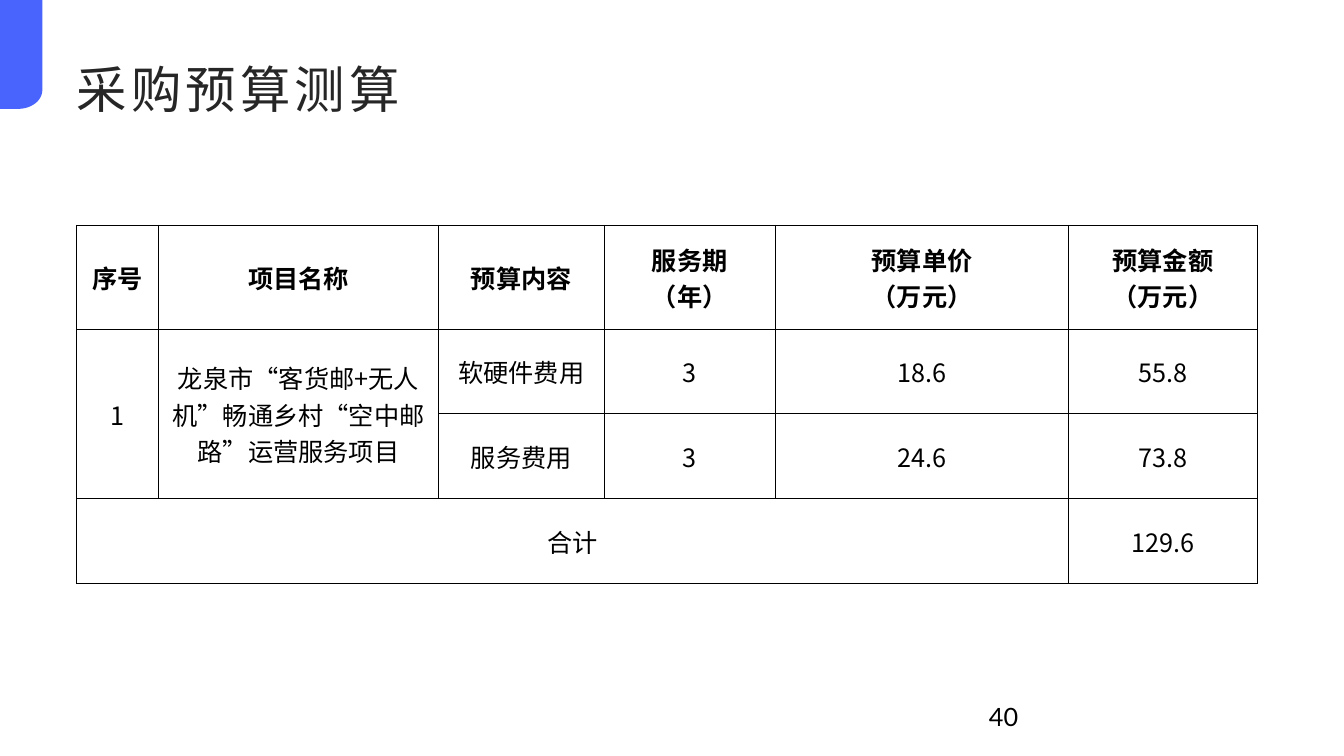
from lxml import etree
from pptx import Presentation
from pptx.dml.color import RGBColor
from pptx.enum.text import MSO_ANCHOR as Anchor, PP_ALIGN as Align
from pptx.oxml import parse_xml
from pptx.oxml.ns import nsdecls, qn
from pptx.util import Inches, Pt


def rgb(value):
    return RGBColor.from_string(value)


def style_run(run, size, font, color, bold=False):
    run.font.size = Pt(size)
    run.font.name = font
    run.font.bold = bold
    run.font.color.rgb = rgb(color)
    east_asian = etree.SubElement(run.font._element, qn("a:ea"))
    east_asian.set("typeface", "Noto Sans CJK SC")


presentation = Presentation()
presentation.slide_width = Inches(13.33)
presentation.slide_height = Inches(7.5)
slide = presentation.slides.add_slide(presentation.slide_layouts[6])

corner = [(0.18, 1.08), (0.31, 1.08), (0.42, 1), (0.42, 0.89)]
curve = []
for step in range(17):
    t = step / 16
    weights = [(1 - t) ** 3, 3 * t * (1 - t) ** 2, 3 * t * t * (1 - t), t ** 3]
    curve.append(tuple(
        sum(weight * point[axis] for weight, point in zip(weights, corner))
        for axis in (0, 1)
    ))
outline = [(0, 1.08)] + curve + [(0.42, 0)]
builder = slide.shapes.build_freeform(0, 0)
builder.add_line_segments([(Inches(x), Inches(y)) for x, y in outline], close=True)
tab = builder.convert_to_shape()
tab.shadow.inherit = False
tab.fill.solid()
tab.fill.fore_color.rgb = rgb("4864FC")
tab.line.fill.background()

title = slide.shapes.add_textbox(Inches(0.76), Inches(0.39), Inches(11.81), Inches(0.79))
frame = title.text_frame
frame.word_wrap = True
frame.vertical_anchor = Anchor.BOTTOM
frame.margin_left = frame.margin_right = frame.margin_top = frame.margin_bottom = 0
frame.text = "采购预算测算"
title_run = frame.paragraphs[0].runs[0]
style_run(title_run, 36, "Cabin", "262626")
title_run.font._element.set("spc", "300")

page_number = slide.shapes.add_textbox(Inches(9.71), Inches(6.91), Inches(2.86), Inches(0.35))
page_number.text_frame.word_wrap = True
page_number.text_frame.text = "40"
style_run(page_number.text_frame.paragraphs[0].runs[0], 18, "Lato", "000000")

column_widths = [0.81, 2.78, 1.64, 1.7, 2.91, 1.87]
row_heights = [1.03, 0.84, 0.84, 0.84]
rows = [
    ["序号", "项目名称", "预算内容", "服务期\n（年）", "预算单价\n（万元）", "预算金额\n（万元）"],
    ["1", "龙泉市“客货邮+无人机”畅通乡村“空中邮路”运营服务项目", "软硬件费用", "3", "18.6", "55.8"],
    ["", "", "服务费用", "3", "24.6", "73.8"],
    ["合计", "", "", "", "", "129.6"],
]
table_frame = slide.shapes.add_table(
    len(rows), len(column_widths), Inches(0.76), Inches(2.235), Inches(11.71), Inches(3.55)
)
table = table_frame.table
table.first_row = False
table.horz_banding = False
for column, width in zip(table.columns, column_widths):
    column.width = Inches(width)
for row, height in zip(table.rows, row_heights):
    row.height = Inches(height)

for row_index, texts in enumerate(rows):
    for column_index, text in enumerate(texts):
        cell = table.cell(row_index, column_index)
        cell.fill.background()
        cell.vertical_anchor = Anchor.MIDDLE
        cell.margin_left = cell.margin_right = cell.margin_top = Inches(0.01)
        cell.margin_bottom = 0
        properties = cell._tc.get_or_add_tcPr()
        for position, side in enumerate(("lnL", "lnR", "lnT", "lnB")):
            properties.insert(position, parse_xml(
                f'<a:{side} {nsdecls("a")} w="{Pt(0.5)}"><a:solidFill>'
                f'<a:srgbClr val="000000"/></a:solidFill></a:{side}>'
            ))
        paragraph = cell.text_frame.paragraphs[0]
        paragraph.text = text
        paragraph.alignment = Align.CENTER
        for run in paragraph.runs:
            style_run(run, 18, "Noto Sans CJK SC", "000000", bold=row_index == 0)

for first, last in [((1, 0), (2, 0)), ((1, 1), (2, 1)), ((3, 0), (3, 4))]:
    table.cell(*first).merge(table.cell(*last))

presentation.save("out.pptx")
